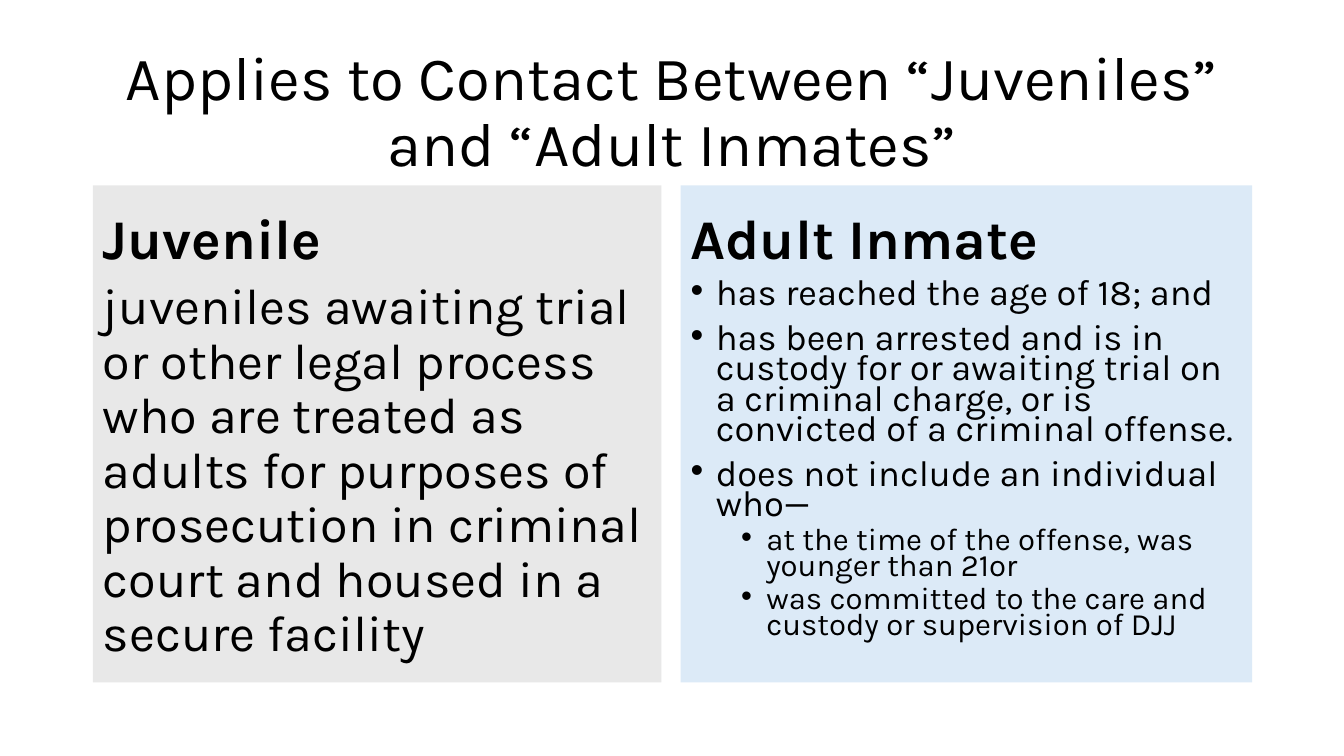
from pptx import Presentation
from pptx.dml.color import RGBColor
from pptx.enum.text import MSO_ANCHOR, MSO_AUTO_SIZE, PP_ALIGN
from pptx.oxml.ns import qn
from pptx.util import Pt
from lxml.etree import SubElement

PX = 9144  # 100 px to the inch
GREY, BLUE, BLACK = "E8E8E8", "DCEAF7", "000000"


def color(value):
    return RGBColor.from_string(value)


def fill_placeholder(placeholder, box, fill, anchor, paragraphs):
    """Place the box and write (text, size, format) paragraphs into it."""
    for name, length in zip(("left", "top", "width", "height"), box):
        setattr(placeholder, name, length * PX)
    if fill:
        placeholder.fill.solid()
        placeholder.fill.fore_color.rgb = color(fill)
    frame = placeholder.text_frame
    frame.word_wrap = True
    frame.auto_size = MSO_AUTO_SIZE.NONE
    frame.vertical_anchor = anchor
    for index, (text, size, style) in enumerate(paragraphs):
        paragraph = frame.add_paragraph() if index else frame.paragraphs[0]
        for name, value in style["paragraph"].items():
            setattr(paragraph, name, value)
        run = paragraph.add_run()
        run.text = text
        font = {"name": "Karla", "size": Pt(size), "bold": style.get("bold", False)}
        for name, value in font.items():
            setattr(run.font, name, value)
        run.font.color.rgb = color(BLACK)
        properties = paragraph._p.get_or_add_pPr()
        indent = style.get("indent", 0)
        properties.set("marL", str(indent * PX))
        properties.set("indent", str(-25 * PX if indent else 0))
        if indent:
            SubElement(properties, qn("a:buFont"), typeface="Arial")
            SubElement(properties, qn("a:buChar"), char="•")
        else:
            SubElement(properties, qn("a:buNone"))


spacing = {"alignment": PP_ALIGN.LEFT, "line_spacing": 0.9, "space_before": Pt(10)}
tight = {**spacing, "line_spacing": 0.7}
title_style = {"paragraph": {**spacing, "alignment": PP_ALIGN.CENTER, "space_before": Pt(0)}}
heading_style = {"paragraph": spacing, "bold": True}
plain_style = {"paragraph": spacing}
bullet_style = {"paragraph": tight, "indent": 25}
sub_bullet_style = {"paragraph": {**tight, "space_before": Pt(5), "level": 1}, "indent": 75}

columns = [
    (92, 564, GREY, "Juvenile", [
        ("juveniles awaiting trial or other legal process who are treated as adults "
         "for purposes of prosecution in criminal court and housed in a secure facility",
         36, plain_style),
    ]),
    (675, 567, BLUE, "Adult Inmate", [
        ("has reached the age of 18; and", 25.9, bullet_style),
        ("has been arrested and is in custody for or awaiting trial on a criminal "
         "charge, or is convicted of a criminal offense.", 25.9, bullet_style),
        ("does not include an individual who—", 25.9, bullet_style),
        ("at the time of the offense, was younger than 21or", 22.2, sub_bullet_style),
        ("was committed to the care and custody or supervision of DJJ", 22.2, sub_bullet_style),
    ]),
]

presentation = Presentation()
presentation.slide_width = 1333 * PX
presentation.slide_height = 750 * PX
comparison_layout = presentation.slide_layouts[4]
slide = presentation.slides.add_slide(comparison_layout)
title, *bodies = slide.placeholders

fill_placeholder(title, (92, 40, 1150, 145), None, MSO_ANCHOR.MIDDLE, [
    ("Applies to Contact Between “Juveniles” and “Adult Inmates”", 44, title_style)])

for (left, width, fill, heading, paragraphs), heading_box, body_box in zip(
        columns, bodies[::2], bodies[1::2]):
    fill_placeholder(heading_box, (left, 184, width, 90), fill, MSO_ANCHOR.BOTTOM,
                     [(heading, 40, heading_style)])
    fill_placeholder(body_box, (left, 274, width, 403), fill, MSO_ANCHOR.TOP, paragraphs)

presentation.save("out.pptx")
